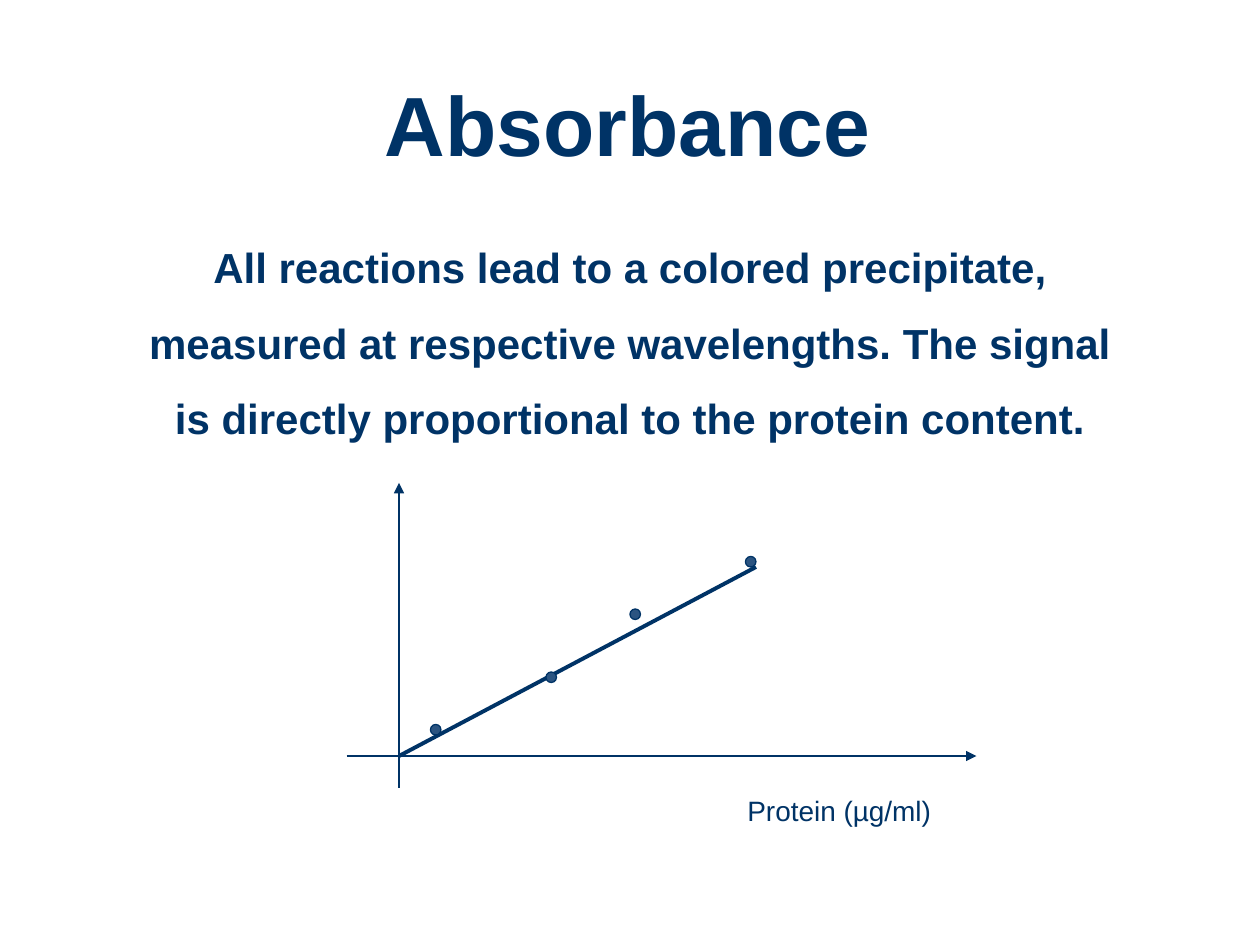
from lxml import etree
from pptx import Presentation
from pptx import util as u
from pptx.dml.color import RGBColor
from pptx.enum import shapes, text
from pptx.oxml.ns import qn

HUES = {"ink": "003366", "dot": "2B5481"}
UNIT = u.Inches(1) / 12


def grid(*cells):
    """Turn twelfths of an inch into lengths."""
    return [u.Emu(round(c * UNIT)) for c in cells]


def hue(name):
    """Look up a colour by name."""
    return RGBColor.from_string(HUES[name])


def write(home, cells, words, size, bold=True, anchor=text.MSO_ANCHOR.TOP):
    """Add a text box and return its paragraph."""
    frame = home.add_textbox(*grid(*cells)).text_frame
    frame.word_wrap = True
    frame.vertical_anchor = anchor
    para = frame.paragraphs[0]
    para.text = words
    para.alignment = text.PP_ALIGN.CENTER if bold else text.PP_ALIGN.LEFT
    font = para.font
    font.name, font.size, font.bold = "Arial", u.Pt(size), bold
    font.color.rgb = hue("ink")
    return para


def draw(home, ends, width, arrow=False):
    """Add a straight line, with an arrowhead at its end if asked."""
    line = home.add_connector(shapes.MSO_CONNECTOR.STRAIGHT, *grid(*ends))
    line.line.color.rgb = hue("ink")
    line.line.width = u.Pt(width)
    if arrow:
        etree.SubElement(line.line._get_or_add_ln(), qn("a:tailEnd"), type="triangle")
    etree.SubElement(line._element.spPr, qn("a:effectLst"))


def dot(home, col, row):
    """Add one data point."""
    mark = home.add_shape(shapes.MSO_SHAPE.OVAL, *grid(col, row, 1, 1))
    mark.shadow.inherit = False
    mark.fill.solid()
    mark.fill.fore_color.rgb = hue("dot")
    mark.line.color.rgb = hue("ink")
    mark.line.width = u.Pt(0.75)


def plot(home):
    """Add the sketch of signal against protein content."""
    draw(home, (38, 72, 72, 54), 2.25)
    write(home, (70, 75, 22, 4.4), "Protein (µg/ml)", 16, bold=False)
    for spot in ((52, 64), (60, 58), (71, 53), (41, 69)):
        dot(home, *spot)
    for axis in ((38, 75, 38, 46), (33, 72, 93, 72)):
        draw(home, axis, 0.75, arrow=True)


def main():
    """Build and save the slide."""
    deck = Presentation()
    deck.slide_width, deck.slide_height = grid(120, 90)
    page = deck.slides.add_slide(deck.slide_layouts[6]).shapes
    write(page, (10, 8, 99.5, 7.5), "Absorbance", 48, anchor=text.MSO_ANCHOR.MIDDLE)
    body = write(
        page,
        (12, 20, 96, 21),
        "All reactions lead to a colored precipitate, measured at respective "
        "wavelengths. The signal is directly proportional to the protein content.",
        24,
    )
    body.line_spacing = 1.5
    plot(page.add_group_shape().shapes)
    deck.save("out.pptx")


if __name__ == "__main__":
    main()
